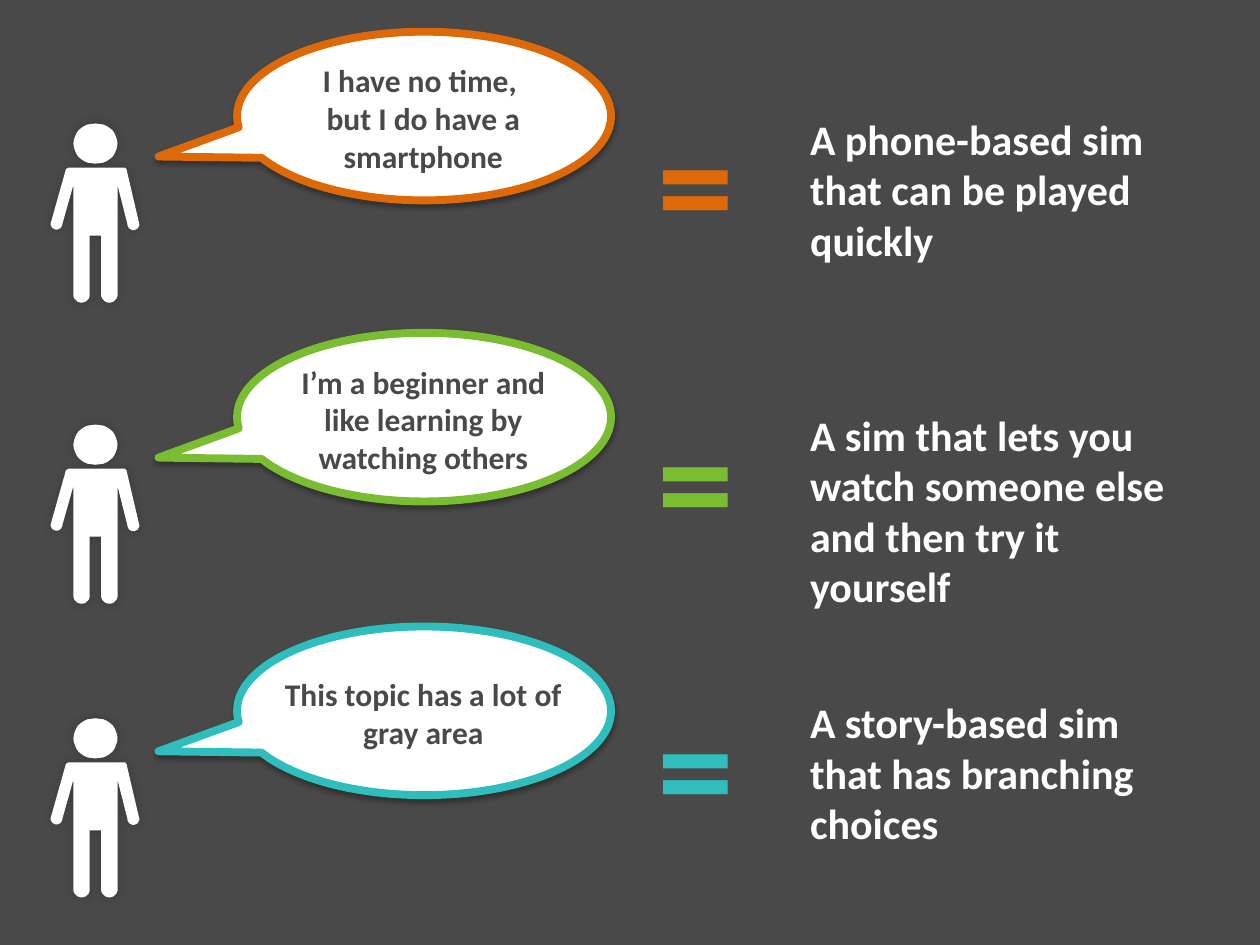
from math import cos, pi, sin

from lxml import etree
from pptx import Presentation
from pptx.dml.color import RGBColor
from pptx.enum.shapes import MSO_SHAPE
from pptx.enum.text import MSO_AUTO_SIZE, PP_ALIGN
from pptx.oxml.ns import qn
from pptx.util import Cm, Pt

CALLOUT = MSO_SHAPE.OVAL_CALLOUT
LEFT, CENTER = PP_ALIGN.LEFT, PP_ALIGN.CENTER
GROW = MSO_AUTO_SIZE.SHAPE_TO_FIT_TEXT

GRAY, WHITE = "494949", "FFFFFF"
BUBBLE_HEIGHT = 3.4
ROWS = [
    ("DD6909", 2.49, "I have no time, \vbut I do have a smartphone", 2.57,
     2.16, "A phone-based sim that can be played quickly", 3.33),
    ("7ABC32", 8.56, "I’m a beginner and like learning by watching others", 2.57,
     8.13, "A sim that lets you watch someone else and then try it yourself", 4.37),
    ("2FBEBB", 14.48, "This topic has a lot of gray area", 1.8,
     13.92, "A story-based sim that has branching choices", 3.33),
]


def color(value):
    return RGBColor.from_string(value)


def arc(x, y, width, height, start=0, end=180):
    steps = (end - start) // 10
    angles = [(start + (end - start) * i / steps) * pi / 180 for i in range(steps + 1)]
    return [(x + width * cos(a), y + height * sin(a)) for a in angles]


class Deck:
    font = "Calibri"

    def __init__(self):
        self.deck = Presentation()
        self.deck.slide_width, self.deck.slide_height = Cm(25.4), Cm(19.05)
        self.page = self.deck.slides.add_slide(self.deck.slide_layouts[6])
        fill = self.page.background.fill
        fill.solid()
        fill.fore_color.rgb = color(GRAY)

    def shadow(self, shape, opacity, blur, distance):
        shape.shadow.inherit = False
        effects = shape._element.spPr.find(qn("a:effectLst"))
        outer = etree.SubElement(
            effects, qn("a:outerShdw"), blurRad=str(Pt(blur)), dist=str(Pt(distance)),
            dir="5400000", algn="ctr", rotWithShape="0")
        tone = etree.SubElement(outer, qn("a:srgbClr"), val="000000")
        etree.SubElement(tone, qn("a:alpha"), val=str(opacity * 1000))

    def fill(self, shape):
        shape.fill.solid()
        shape.fill.fore_color.rgb = color(WHITE)

    def person(self, left, top):
        right_hand = arc(167, 203, 12, 12)
        right_foot = arc(118.5, 345, 16.5, 16)
        left_foot = arc(62.5, 345, 16.5, 16)
        left_hand = arc(12, 202, 12, 12)
        body = [(150, 89), (153, 92), *right_hand, (135, 124), *right_foot,
                (102, 226), (79, 226), *left_foot, (46, 124), *left_hand, (31, 92)]
        head = arc(90.5, 40.5, 44.5, 40.5, 0, 360)
        builder = self.page.shapes.build_freeform(36, 89, scale=Cm(0.01))
        builder.add_line_segments(body, close=True)
        builder.move_to(*head[0])
        builder.add_line_segments(head[1:], close=True)
        shape = builder.convert_to_shape(Cm(left), Cm(top))
        self.fill(shape)
        shape.line.fill.background()
        self.shadow(shape, 20, 6, 0)

    def bubble(self, left, top, width, height, outline):
        shape = self.page.shapes.add_shape(CALLOUT, Cm(left), Cm(top), Cm(width), Cm(height))
        shape.adjustments[0], shape.adjustments[1] = -0.71, 0.24
        self.fill(shape)
        shape.line.color.rgb = color(outline)
        shape.line.width = Pt(4.5)
        self.shadow(shape, 35, 3.1, 1.8)

    def text(self, left, top, width, height, words, size, tone, align=LEFT):
        box = self.page.shapes.add_textbox(Cm(left), Cm(top), Cm(width), Cm(height))
        frame = box.text_frame
        frame.word_wrap = True
        frame.auto_size = GROW
        para = frame.paragraphs[0]
        para.text = words
        para.alignment = align
        para.font.name = self.font
        para.font.size = Pt(size)
        para.font.bold = True
        para.font.color.rgb = color(tone)


def main():
    slide = Deck()
    for accent, top, quote, quote_height, answer_top, answer, answer_height in ROWS:
        bubble_top = top - 1.85
        quote_top = bubble_top + (BUBBLE_HEIGHT - quote_height) / 2 + 0.06
        slide.person(1.02, top)
        slide.bubble(4.78, bubble_top, 7.54, BUBBLE_HEIGHT, accent)
        slide.text(5.46, quote_top, 6.15, quote_height, quote, 18, GRAY, CENTER)
        slide.text(16.08, answer_top, 8.26, answer_height, answer, 24, WHITE)
        slide.text(13, answer_top - 0.55, 2.54, 4.01, "=", 88, accent)
    slide.deck.save("out.pptx")


if __name__ == "__main__":
    main()
